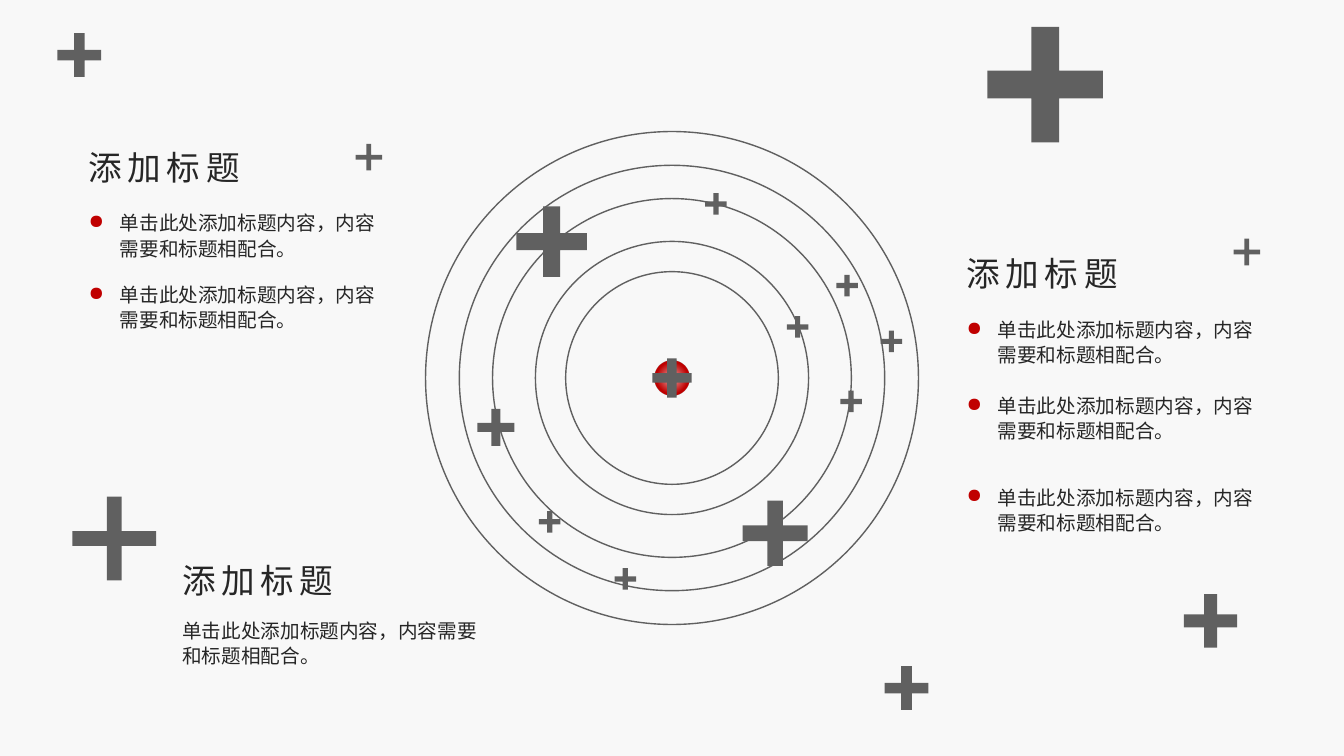
from pptx import Presentation
from pptx import util as u
from pptx.dml.color import RGBColor
from pptx.enum import shapes, text
from pptx.oxml import parse_xml
from pptx.oxml.ns import nsdecls, qn
from lxml import etree

COLORS = {"background": "F8F8F8", "grey": "606060", "ink": "262626",
          "red": "C00000", "glow": "F6F8FC"}
FONT = "Noto Sans CJK SC"
COLUMNS, ROWS = 40, 22.5
CELL = u.Inches(40 / 3) / COLUMNS  # square grid cell
TITLE = "添加标题"
BODY = "单击此处添加标题内容，内容需要和标题相配合。"
THIN, THICK = 0.13, 0.177  # arm widths of the plus signs


def cells(*values):
    return [u.Emu(round(value * CELL)) for value in values]


def color(name):
    return RGBColor.from_string(COLORS[name])


def add_centred(container, preset, x, y, size):
    shape = container.add_shape(preset, *cells(x - size / 2, y - size / 2, size, size))
    shape.shadow.inherit = False
    shape.fill.background()
    shape.line.fill.background()
    return shape


def add_plus(slide, x, y, size, arm=THICK):
    plus = add_centred(slide.shapes, shapes.MSO_SHAPE.MATH_PLUS, x, y, size)
    plus.adjustments[0] = arm
    plus.fill.solid()
    plus.fill.fore_color.rgb = color("grey")


def add_text(slide, box, wording, size, wrap):
    shape = slide.shapes.add_textbox(*cells(*box))
    frame = shape.text_frame
    frame.text = wording
    frame.word_wrap = wrap
    frame.auto_size = text.MSO_AUTO_SIZE.SHAPE_TO_FIT_TEXT
    paragraph = frame.paragraphs[0]
    run = paragraph.runs[0]
    run.font.size = u.Pt(size)
    run.font.name = FONT
    run.font.color.rgb = color("ink")
    properties = run.font._element
    properties.set("lang", "zh-CN")
    east_asian = etree.SubElement(properties, qn("a:ea"))
    east_asian.set("typeface", FONT)
    return paragraph


def add_bullet(paragraph):
    properties = paragraph._p.get_or_add_pPr()
    indent = u.Inches(0.31)
    properties.set("marL", str(indent))
    properties.set("indent", str(-indent))
    bullet_color = etree.SubElement(properties, qn("a:buClr"))
    etree.SubElement(bullet_color, qn("a:srgbClr")).set("val", COLORS["red"])
    etree.SubElement(properties, qn("a:buChar")).set("char", "●")


def add_text_block(slide, left, top, body_offsets, bulleted, marker):
    # Heading
    heading = add_text(slide, (left, top, 5.28, 1.5), TITLE, 24, False)
    heading.runs[0].font._element.set("spc", "400")
    # Body paragraphs
    for offset in body_offsets:
        body = add_text(slide, (left, top + offset, 9.63, 1.83), BODY, 14, True)
        body.line_spacing = u.Pt(18)
        if bulleted:
            add_bullet(body)
    # Plus sign beside the heading
    x, y, size = marker
    add_plus(slide, left + x, top + y, size, THIN)


def add_orbits(slide, x, y):
    # Concentric rings
    rings = slide.shapes.add_group_shape()
    for diameter in (14.67, 12.66, 10.68, 8.13, 6.33):
        ring = add_centred(rings.shapes, shapes.MSO_SHAPE.OVAL, x, y, diameter)
        ring.line.color.rgb = color("grey")
        ring.line.width = u.Pt(1)
    # Glowing core
    core = add_centred(slide.shapes, shapes.MSO_SHAPE.OVAL, x, y, 1.02)
    red, glow = COLORS["red"], COLORS["glow"]
    gradient = parse_xml(
        f'<a:gradFill {nsdecls("a")} rotWithShape="1"><a:gsLst>'
        f'<a:gs pos="0"><a:srgbClr val="{glow}"/></a:gs>'
        f'<a:gs pos="23000"><a:srgbClr val="{red}"><a:alpha val="55000"/></a:srgbClr></a:gs>'
        f'<a:gs pos="63000"><a:srgbClr val="{red}"/></a:gs>'
        f'<a:gs pos="100000"><a:srgbClr val="{red}"/></a:gs></a:gsLst>'
        '<a:path path="circle"><a:fillToRect l="50000" t="50000" r="50000" b="50000"/>'
        '</a:path></a:gradFill>')
    properties = core._element.spPr
    properties.replace(properties.find(qn("a:noFill")), gradient)
    # Satellites, measured from the core
    small = 0.87
    for dx, dy, size in ((-3.58, -4.06, 2.85), (-5.24, 1.47, 1.5), (3.07, 4.62, 2.64),
                         (-1.39, 5.98, small), (-3.64, 4.28, small), (5.33, 0.7, small),
                         (5.21, -2.75, small), (1.31, -5.18, small), (3.74, -1.52, small),
                         (6.53, -1.09, small), (0, 0, 1.59)):
        add_plus(slide, x + dx, y + dy, size)


def add_scattered_pluses(slide):
    for x, y, size in ((31.11, 2.52, 4.68), (36.03, 18.48, 2.16),
                       (26.98, 20.48, 1.77), (2.36, 1.64, 1.77)):
        add_plus(slide, x, y, size)


def main():
    presentation = Presentation()
    presentation.slide_width, presentation.slide_height = cells(COLUMNS, ROWS)
    slide = presentation.slides.add_slide(presentation.slide_layouts[6])
    slide.background.fill.solid()
    slide.background.fill.fore_color.rgb = color("background")

    add_text_block(slide, 2.34, 4.23, (1.86, 3.99), True, (8.64, 0.45, 1.08))
    add_text_block(slide, 5.13, 16.53, (1.68,), False, (-1.73, -0.5, 3.39))
    add_text_block(slide, 28.47, 7.38, (1.89, 4.14, 6.87), True, (8.64, 0.12, 1.08))
    add_orbits(slide, COLUMNS / 2, ROWS / 2)
    add_scattered_pluses(slide)
    presentation.save("out.pptx")


if __name__ == "__main__":
    main()
